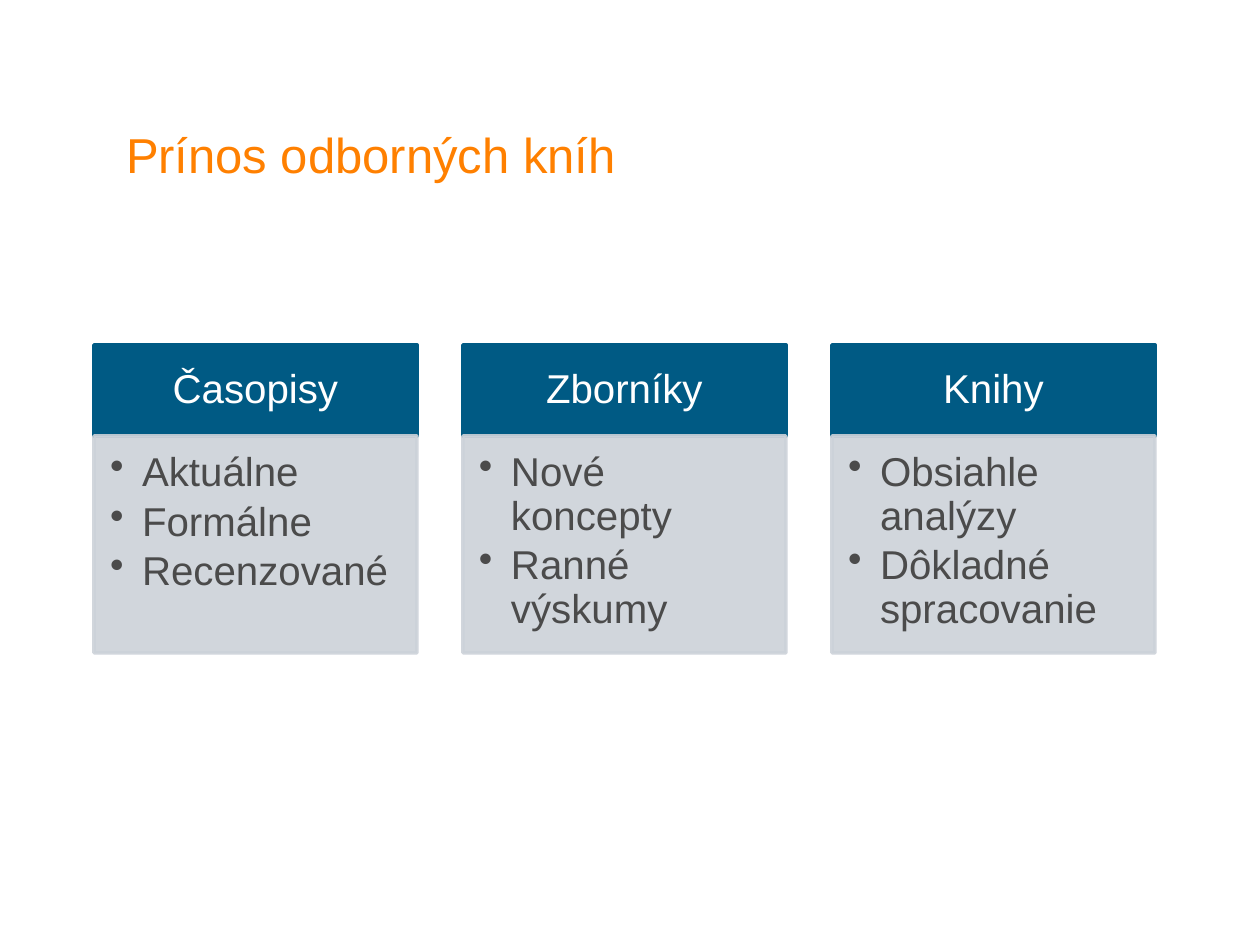
from dataclasses import dataclass

from lxml import etree
from pptx import Presentation
from pptx.dml.color import RGBColor
from pptx.enum.shapes import MSO_SHAPE
from pptx.enum.text import MSO_ANCHOR, PP_ALIGN
from pptx.oxml.ns import qn
from pptx.util import Emu, Pt

RECT = MSO_SHAPE.RECTANGLE
TOP, MIDDLE, BOTTOM = MSO_ANCHOR.TOP, MSO_ANCHOR.MIDDLE, MSO_ANCHOR.BOTTOM
LEFT, CENTER = PP_ALIGN.LEFT, PP_ALIGN.CENTER
SCALE = 914400 / 126
FONT = "Arial"
ORANGE, BLUE, GREY, DARK, WHITE = "FF8000", "005A84", "CCD2D9", "4B4B4B", "FFFFFF"
COL_X, COL_STEP, COL_W = 94, 369, 323
HEAD_Y, HEAD_H, BODY_H = 345, 91, 217
INDENT = 32


@dataclass
class Column:
    head: str
    items: list[str]


@dataclass
class Style:
    size: int
    color: str
    anchor: MSO_ANCHOR
    align: PP_ALIGN
    inset: tuple[int, int, int, int]
    after: float = 0
    bullet: bool = False


TITLE = Style(28, ORANGE, BOTTOM, LEFT, (0, 0, 0, 0))
HEAD = Style(23, WHITE, MIDDLE, CENTER, (23, 13, 23, 13), 8)
BODY = Style(23, DARK, TOP, LEFT, (16, 16, 23, 25), 3.45, True)

COLUMNS = [
    Column("Časopisy", ["Aktuálne", "Formálne", "Recenzované"]),
    Column("Zborníky", ["Nové koncepty", "Ranné výskumy"]),
    Column("Knihy", ["Obsiahle analýzy", "Dôkladné spracovanie"]),
]


def px(n: int) -> Emu:
    return Emu(round(n * SCALE))


def rgb(code: str) -> RGBColor:
    return RGBColor.from_string(code)


def add_bullet(para) -> None:
    props = para._p.get_or_add_pPr()
    props.set("marL", str(px(INDENT)))
    props.set("indent", str(-px(INDENT)))
    etree.SubElement(props, qn("a:buChar")).set("char", "•")


def write(shape, lines: list[str], style: Style) -> None:
    frame = shape.text_frame
    frame.word_wrap = True
    frame.vertical_anchor = style.anchor
    (frame.margin_left, frame.margin_top,
     frame.margin_right, frame.margin_bottom) = map(px, style.inset)
    frame.text = "\n".join(lines)
    for para in frame.paragraphs:
        para.alignment = style.align
        para.line_spacing = 0.9
        para.space_after = Pt(style.after)
        if style.bullet:
            add_bullet(para)
        para.font.name = FONT
        para.font.size = Pt(style.size)
        para.font.color.rgb = rgb(style.color)


def add_box(slide, x: int, y: int, w: int, h: int, color: str, alpha: int = 100):
    box = slide.shapes.add_shape(RECT, px(x), px(y), px(w), px(h))
    box.shadow.inherit = False
    box.fill.solid()
    box.fill.fore_color.rgb = rgb(color)
    box.line.color.rgb = rgb(color)
    box.line.width = Pt(2)
    if alpha < 100:
        for tone in box._element.spPr.iter(qn("a:srgbClr")):
            etree.SubElement(tone, qn("a:alpha")).set("val", str(alpha * 1000))
    return box


def add_column(slide, x: int, col: Column) -> None:
    head = add_box(slide, x, HEAD_Y, COL_W, HEAD_H, BLUE)
    write(head, [col.head], HEAD)
    body = add_box(slide, x, HEAD_Y + HEAD_H, COL_W, BODY_H, GREY, 90)
    write(body, col.items, BODY)


def main() -> None:
    deck = Presentation()
    deck.slide_width, deck.slide_height = px(1260), px(945)
    slide = deck.slides.add_slide(deck.slide_layouts[6])
    title = slide.shapes.add_textbox(px(126), px(69), px(1016), px(115))
    write(title, ["Prínos odborných kníh"], TITLE)
    for i, col in enumerate(COLUMNS):
        add_column(slide, COL_X + i * COL_STEP, col)
    deck.save("out.pptx")


if __name__ == "__main__":
    main()
